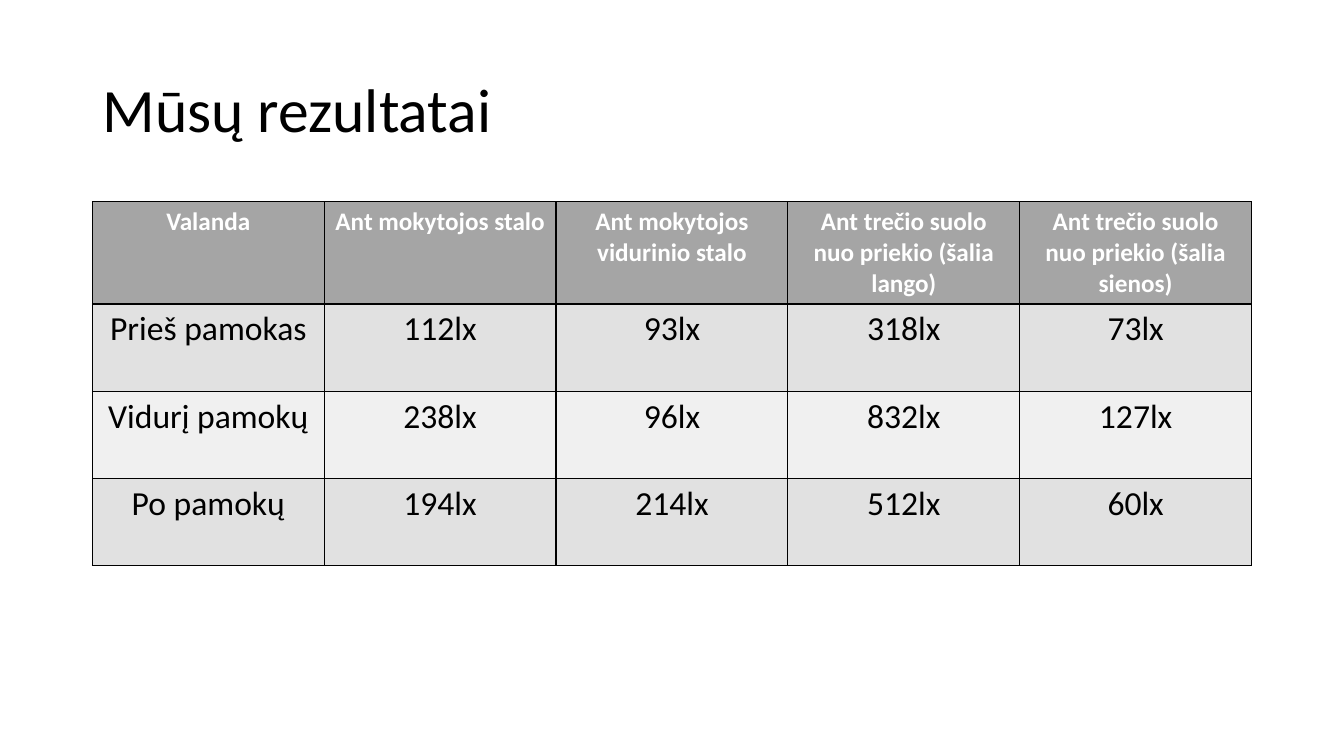
from lxml import etree
from pptx import Presentation
from pptx.dml.color import RGBColor
from pptx.enum.text import MSO_ANCHOR, MSO_AUTO_SIZE, PP_ALIGN
from pptx.oxml.ns import qn
from pptx.util import Pt

EMU_PER_PX = 9525
LEFT, CENTER = PP_ALIGN.LEFT, PP_ALIGN.CENTER
MIDDLE = MSO_ANCHOR.MIDDLE
NO_AUTOFIT = MSO_AUTO_SIZE.NONE
TITLE_ONLY = 5

TITLE_BOX = (88, 38, 1104, 139)
TABLE_BOX = (88, 192, 1104, 332)
BLACK, WHITE = "000000", "FFFFFF"
HEADER_FILL = "A5A5A5"
BAND_FILLS = ("F0F0F0", "E1E1E1")
TITLE_FONT = {"name": "Calibri", "size": Pt(44), "bold": False}
HEADER_FONT = {"name": "Calibri", "size": Pt(18), "bold": True}
BODY_FONT = {"name": "Calibri", "size": Pt(24), "bold": False}

RESULTS = [
    ["Valanda", "Ant mokytojos stalo", "Ant mokytojos vidurinio stalo",
     "Ant trečio suolo nuo priekio (šalia lango)",
     "Ant trečio suolo nuo priekio (šalia sienos)"],
    ["Prieš pamokas", "112lx", "93lx", "318lx", "73lx"],
    ["Vidurį pamokų", "238lx", "96lx", "832lx", "127lx"],
    ["Po pamokų", "194lx", "214lx", "512lx", "60lx"],
]


def px(length):
    return length * EMU_PER_PX


def color(value):
    return RGBColor.from_string(value)


def set_attributes(target, values):
    for name, value in values.items():
        setattr(target, name, value)


def write_text(text_frame, text, font_values, font_color, alignment):
    paragraph = text_frame.paragraphs[0]
    paragraph.alignment = alignment
    run = paragraph.add_run()
    run.text = text
    set_attributes(run.font, font_values)
    run.font.color.rgb = color(font_color)
    return paragraph


def add_borders(cell, line_color, width):
    properties = cell._tc.get_or_add_tcPr()
    for position, side in enumerate(("a:lnL", "a:lnR", "a:lnT", "a:lnB")):
        line = etree.Element(qn(side), w=str(width))
        fill = etree.SubElement(line, qn("a:solidFill"))
        etree.SubElement(fill, qn("a:srgbClr"), val=line_color)
        properties.insert(position, line)


def place_title(slide, box, text):
    title = slide.shapes.title
    set_attributes(title, dict(zip(("left", "top", "width", "height"), map(px, box))))
    set_attributes(title.text_frame, {
        "vertical_anchor": MIDDLE, "word_wrap": True, "auto_size": NO_AUTOFIT})
    paragraph = write_text(title.text_frame, text, TITLE_FONT, BLACK, LEFT)
    paragraph.line_spacing = 0.9


def add_results_table(slide, box, rows):
    table = slide.shapes.add_table(len(rows), len(rows[0]), *map(px, box)).table
    for row_index, row in enumerate(rows):
        is_header = row_index == 0
        fill = HEADER_FILL if is_header else BAND_FILLS[row_index % 2]
        font = HEADER_FONT if is_header else BODY_FONT
        font_color = WHITE if is_header else BLACK
        for column_index, text in enumerate(row):
            cell = table.cell(row_index, column_index)
            cell.fill.solid()
            cell.fill.fore_color.rgb = color(fill)
            add_borders(cell, BLACK, Pt(1))
            write_text(cell.text_frame, text, font, font_color, CENTER)


def main():
    presentation = Presentation()
    presentation.slide_width = px(1280)
    presentation.slide_height = px(720)
    slide = presentation.slides.add_slide(presentation.slide_layouts[TITLE_ONLY])
    place_title(slide, TITLE_BOX, "Mūsų rezultatai")
    add_results_table(slide, TABLE_BOX, RESULTS)
    presentation.save("out.pptx")


if __name__ == "__main__":
    main()
